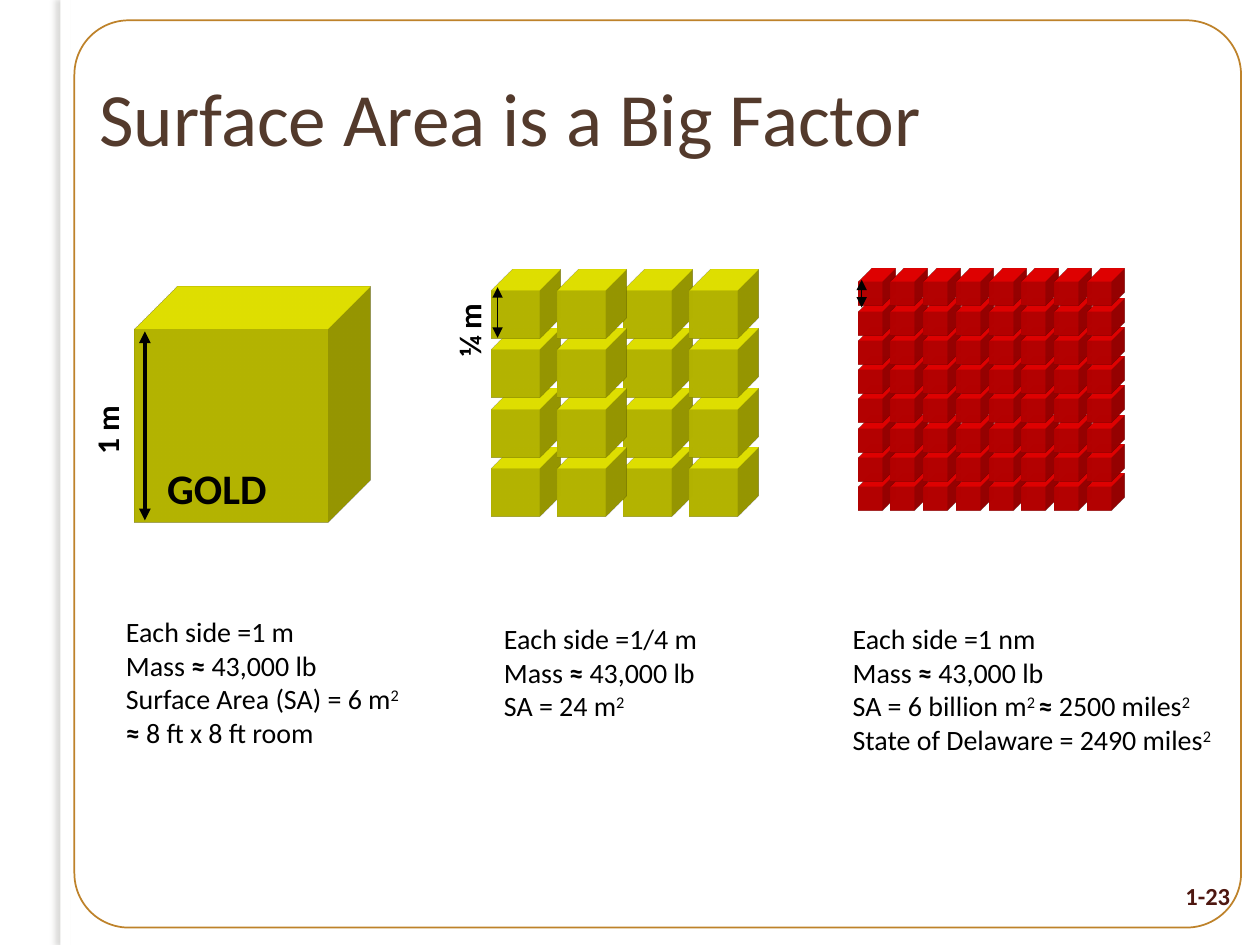
"""Build the slide comparing the surface area of one cube with many small cubes."""
from itertools import product
from lxml import etree
from pptx import Presentation, util as u
from pptx.dml.color import RGBColor
from pptx.enum import shapes, text
from pptx.oxml import parse_xml
from pptx.oxml.ns import qn

THEME = {
    "font": "Calibri", "ink": "000000", "title": "533A2C", "number": "4E1710",
    "paper": "FFFFFF", "frame": "B77513", "gold": "FFFF00", "red": "FF0000",
    "glow": "FFFF99", "shadow": "74726D",
    "title_size": 43, "gold_size": 24, "label_size": 18, "body_size": 16, "number_size": 14,
}
NAMESPACE = 'xmlns:a="http://schemas.openxmlformats.org/drawingml/2006/main"'

TITLE = "Surface Area is a Big Factor"
NEAR, SQUARE = ("≈ ", "bold"), ("2", "super")
MASS = ["Mass ", NEAR, "43,000 lb"]
NOTES = [
    ((2.29, 12.27, 6.55, 2.84), [
        ["Each side =1 m"], MASS, ["Surface Area (SA) = 6 m", SQUARE], [NEAR, "8 ft x 8 ft room"]]),
    ((9.91, 12.41, 5.92, 2.17), [
        ["Each side =1/4 m"], MASS, ["SA = 24 m", SQUARE]]),
    ((16.94, 12.41, 8.46, 2.84), [
        ["Each side =1 nm"], MASS,
        ["SA = 6 billion m", ("2 ", "super"), NEAR, "2500 miles", SQUARE],
        ["State of Delaware = 2490 miles", SQUARE]]),
]
BLOCKS = {
    "whole": dict(start=(2.72, 6.65), side=3.89, pitch=(0, 0), columns=[0], rows=1,
                  depth=2.45, color="gold"),
    "quarters": dict(start=(9.91, 5.85), side=0.97, pitch=(1.33, 1.2), columns=[0, 2, 1, 3], rows=4,
                     depth=1.2, color="gold"),
    "nano": dict(start=(17.3, 5.69), side=0.48, pitch=(0.66, 0.59), columns=range(8), rows=8,
                 depth=0.76, color="red"),
}
ARROW = [
    [(16.71, 7.72), (16.71, 7.87), (16.05, 7.87), (16.05, 8.18), (16.71, 8.18), (16.71, 8.33), (16.99, 8.03)],
    [(15.95, 7.87), (15.95, 8.18), (16.03, 8.18), (16.03, 7.87)],
    [(15.88, 7.87), (15.88, 8.18), (15.9, 8.18), (15.9, 7.87)],
]


def color(name):
    return RGBColor.from_string(THEME[name])


def lengths(values):
    return [u.Cm(value) for value in values]


def write(frame, lines, size="body_size", ink="ink", bold=False, align=text.PP_ALIGN.LEFT):
    frame.word_wrap = True
    for index, line in enumerate(lines):
        para = frame.paragraphs[0] if index == 0 else frame.add_paragraph()
        para.alignment = align
        for part in line:
            words, style = part if isinstance(part, tuple) else (part, "")
            span = para.add_run()
            span.text = words
            span.font.name, span.font.size = THEME["font"], u.Pt(THEME[size])
            span.font.color.rgb = color(ink)
            span.font.bold = bold or style == "bold"
            if style == "super":
                span.font._element.set("baseline", "30000")


def add_text(parent, place, lines, rotation=0, **style):
    box = parent.add_textbox(*lengths(place))
    box.rotation = rotation
    write(box.text_frame, lines, **style)


def add_shape(parent, kind, place, fill=None):
    shape = parent.add_shape(kind, *lengths(place))
    shape.shadow.inherit = False
    shape.line.fill.background()
    if fill:
        shape.fill.solid()
        shape.fill.fore_color.rgb = color(fill)
    else:
        shape.fill.background()
    return shape


def add_cubes(parent, start, side, pitch, columns, rows, depth, color):
    for column, row in product(columns, reversed(range(rows))):
        place = (start[0] + column * pitch[0], start[1] + row * pitch[1], side, side)
        cube = add_shape(parent, shapes.MSO_SHAPE.RECTANGLE, place, color)
        properties = cube._element.spPr
        properties.append(parse_xml(
            f'<a:scene3d {NAMESPACE}><a:camera prst="legacyObliqueTopRight"/>'
            '<a:lightRig rig="legacyFlat3" dir="r"/></a:scene3d>'))
        properties.append(parse_xml(
            f'<a:sp3d {NAMESPACE} extrusionH="{u.Cm(depth)}" prstMaterial="legacyMatte">'
            f'<a:extrusionClr><a:srgbClr val="{THEME[color]}"/></a:extrusionClr></a:sp3d>'))


def add_measure(parent, x, top, bottom, width):
    line = parent.add_connector(shapes.MSO_CONNECTOR.STRAIGHT, *lengths((x, top, x, bottom)))
    line.line.color.rgb, line.line.width = color("ink"), u.Pt(width)
    outline = line.line._get_or_add_ln()
    for end in ("a:headEnd", "a:tailEnd"):
        etree.SubElement(outline, qn(end), type="triangle")
    etree.SubElement(line._element.spPr, qn("a:effectLst"))


def add_arrow(parent):
    builder = parent.build_freeform(*ARROW[0][0], scale=u.Cm(1))
    for index, outline in enumerate(ARROW):
        if index:
            builder.move_to(*outline[0])
        builder.add_line_segments(outline[1:], close=True)
    arrow = builder.convert_to_shape()
    arrow.shadow.inherit = False
    arrow.line.fill.background()
    arrow.fill.gradient()
    arrow.fill.gradient_angle = 0
    for stop, name in zip(arrow.fill.gradient_stops, ("glow", "red")):
        stop.color.rgb = color(name)


def add_backdrop(parent):
    strip = add_shape(parent, shapes.MSO_SHAPE.RECTANGLE, (1.22, 0, 0.2, 19.05), "paper")
    effects = strip._element.spPr.find(qn("a:effectLst"))
    effects.append(parse_xml(
        f'<a:outerShdw {NAMESPACE} blurRad="{u.Pt(3)}" dist="{u.Pt(3)}" dir="10800000">'
        f'<a:srgbClr val="{THEME["shadow"]}"><a:alpha val="25000"/></a:srgbClr></a:outerShdw>'))
    frame = add_shape(parent, shapes.MSO_SHAPE.ROUNDED_RECTANGLE, (1.5, 0.41, 23.52, 18.29))
    frame.adjustments[0] = 0.06
    frame.line.color.rgb, frame.line.width = color("frame"), u.Pt(1)
    tint = frame.line._get_or_add_ln().find(".//" + qn("a:srgbClr"))
    etree.SubElement(tint, qn("a:alpha"), val="90000")


def main():
    deck = Presentation()
    deck.slide_width, deck.slide_height = lengths((25.4, 19.05))
    page = deck.slides.add_slide(deck.slide_layouts[5])
    canvas = page.shapes
    add_backdrop(canvas)

    title = canvas.title
    title.left, title.top, title.width, title.height = lengths((1.75, 0.76, 23.06, 3.18))
    title.text_frame.vertical_anchor = text.MSO_ANCHOR.MIDDLE
    write(title.text_frame, [[TITLE]], size="title_size", ink="title")

    add_cubes(canvas, **BLOCKS["whole"])
    quarters = canvas.add_group_shape().shapes
    add_cubes(quarters, **BLOCKS["quarters"])
    add_text(quarters, (8.31, 5.74, 2.34, 1.07), [["¼ m"]], rotation=270, size="label_size", bold=True)
    add_measure(quarters, 10.03, 5.79, 6.81, 0.75)
    nano = canvas.add_group_shape().shapes
    add_cubes(nano, **BLOCKS["nano"])
    add_measure(nano, 17.37, 5.64, 6.2, 0.75)
    add_arrow(nano)

    add_measure(canvas, 2.92, 6.68, 10.49, 2.25)
    add_text(canvas, (1.12, 7.82, 2.11, 1.07), [["1 m"]], rotation=270, size="label_size", bold=True)
    add_text(canvas, (3.12, 9.19, 3.18, 1.07), [["GOLD"]], size="gold_size", bold=True)
    for place, lines in NOTES:
        add_text(canvas, place, lines)
    add_text(canvas, (23.27, 17.63, 1.78, 1.27), [["1-23"]], size="number_size", ink="number",
             bold=True, align=text.PP_ALIGN.RIGHT)
    deck.save("out.pptx")


if __name__ == "__main__":
    main()
